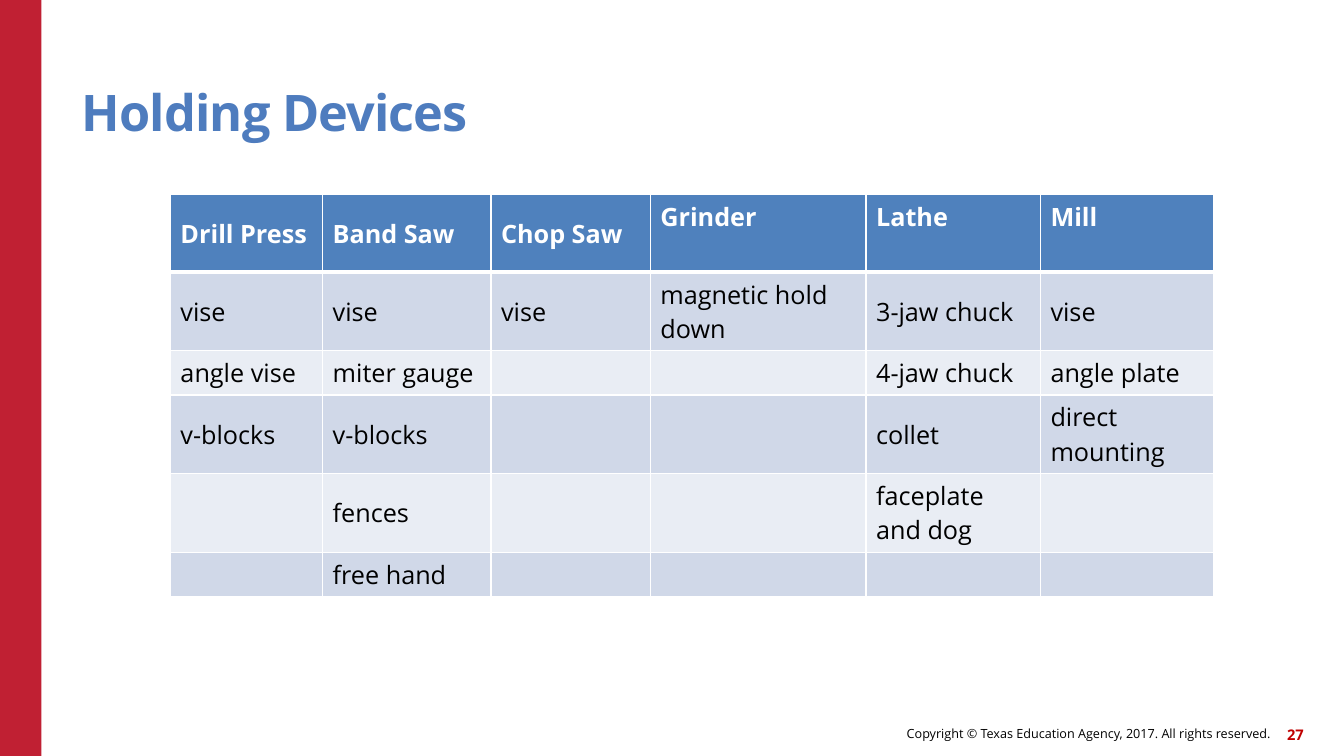
from itertools import product

from lxml.etree import SubElement
from pptx import Presentation
from pptx.dml.color import RGBColor
from pptx.enum.shapes import MSO_SHAPE as Shape
from pptx.enum.text import MSO_ANCHOR as Anchor, PP_ALIGN as Align
from pptx.oxml.ns import qn
from pptx.util import Inches, Pt

# Content
TITLE = "Holding Devices"
COPYRIGHT = "Copyright © Texas Education Agency, 2017. All rights reserved."
PAGE_NUMBER = "27"
# machine, column width, header anchor, holding devices
MACHINES = [
    ("Drill Press", 1.51, Anchor.MIDDLE, ["vise", "angle vise", "v-blocks"]),
    ("Band Saw", 1.67, Anchor.MIDDLE,
     ["vise", "miter gauge", "v-blocks", "fences", "free hand"]),
    ("Chop Saw", 1.58, Anchor.MIDDLE, ["vise"]),
    ("Grinder", 2.14, Anchor.TOP, ["magnetic hold down"]),
    ("Lathe", 1.73, Anchor.TOP,
     ["3-jaw chuck", "4-jaw chuck", "collet", "faceplate and dog"]),
    ("Mill", 1.72, Anchor.TOP, ["vise", "angle plate", "direct mounting"]),
]
ROW_HEIGHTS = [0.77, 0.78, 0.44, 0.78, 0.78, 0.44]

THEME = {
    "font": "Open Sans",
    "title": "4E7CBE", "band": "C02033", "page": "C00000",
    "text": "000000", "white": "FFFFFF",
    "header": "4F81BD", "rows": ["D0D8E8", "E9EDF4"],
    "title_size": 36, "table_size": 18, "copyright_size": 9, "page_size": 10.5,
}


def add_run(paragraph, text, size, color, bold=False):
    run = paragraph.add_run()
    run.text = text
    run.font.name = THEME["font"]
    run.font.size = Pt(size)
    run.font.bold = bold
    run.font.color.rgb = RGBColor.from_string(color)
    return run


def add_text(slide, bounds, text, size, color, bold=False,
             align=Align.LEFT, anchor=Anchor.MIDDLE):
    frame = slide.shapes.add_textbox(*map(Inches, bounds)).text_frame
    frame.word_wrap = True
    frame.vertical_anchor = anchor
    frame.margin_left = frame.margin_right = 0
    frame.margin_top = frame.margin_bottom = 0
    paragraph = frame.paragraphs[0]
    paragraph.alignment = align
    return paragraph, add_run(paragraph, text, size, color, bold)


def style_cell(cell, fill, top, bottom):
    """Add the borders, which must come before the fill in the XML."""
    properties = cell._tc.get_or_add_tcPr()
    for side, width in (("L", 1), ("R", 1), ("T", top), ("B", bottom)):
        line = SubElement(properties, qn(f"a:ln{side}"), w=str(Pt(width)))
        solid = SubElement(line, qn("a:solidFill"))
        SubElement(solid, qn("a:srgbClr"), val=THEME["white"])
    cell.fill.solid()
    cell.fill.fore_color.rgb = RGBColor.from_string(fill)


def add_devices_table(slide):
    widths = [width for _, width, _, _ in MACHINES]
    table = slide.shapes.add_table(
        len(ROW_HEIGHTS), len(MACHINES), Inches(1.69), Inches(1.93),
        Inches(sum(widths)), Inches(sum(ROW_HEIGHTS))).table
    for column, width in zip(table.columns, widths):
        column.width = Inches(width)
    for row, height in zip(table.rows, ROW_HEIGHTS):
        row.height = Inches(height)

    for r, c in product(range(len(ROW_HEIGHTS)), range(len(MACHINES))):
        machine, _, header_anchor, devices = MACHINES[c]
        is_header = r == 0
        cell = table.cell(r, c)
        fill = THEME["header"] if is_header else THEME["rows"][(r - 1) % 2]
        style_cell(cell, fill, top=3 if r == 1 else 1, bottom=3 if is_header else 1)
        cell.vertical_anchor = header_anchor if is_header else Anchor.MIDDLE
        entries = [machine, *devices]
        if r < len(entries):
            add_run(cell.text_frame.paragraphs[0], entries[r], THEME["table_size"],
                    THEME["white"] if is_header else THEME["text"], is_header)


def main():
    deck = Presentation()
    deck.slide_width, deck.slide_height = Inches(13.33), Inches(7.5)
    slide = deck.slides.add_slide(deck.slide_layouts[6])

    # Side band
    band = slide.shapes.add_shape(Shape.RECTANGLE, 0, 0, Inches(0.41), Inches(7.5))
    band.shadow.inherit = False
    band.fill.solid()
    band.fill.fore_color.rgb = RGBColor.from_string(THEME["band"])
    band.line.fill.background()

    # Footer
    add_text(slide, (6.14, 7.12, 6.46, 0.32), COPYRIGHT,
             THEME["copyright_size"], THEME["text"], align=Align.RIGHT)
    add_text(slide, (12.51, 7.13, 0.42, 0.32), PAGE_NUMBER,
             THEME["page_size"], THEME["page"], bold=True, align=Align.RIGHT)

    # Title, slightly tightened
    paragraph, run = add_text(slide, (0.81, 0.45, 11, 0.96), TITLE,
                              THEME["title_size"], THEME["title"], bold=True,
                              anchor=Anchor.BOTTOM)
    paragraph.line_spacing = 0.9
    run.font._element.set("spc", "-60")

    # Table
    add_devices_table(slide)
    deck.save("out.pptx")


if __name__ == "__main__":
    main()
